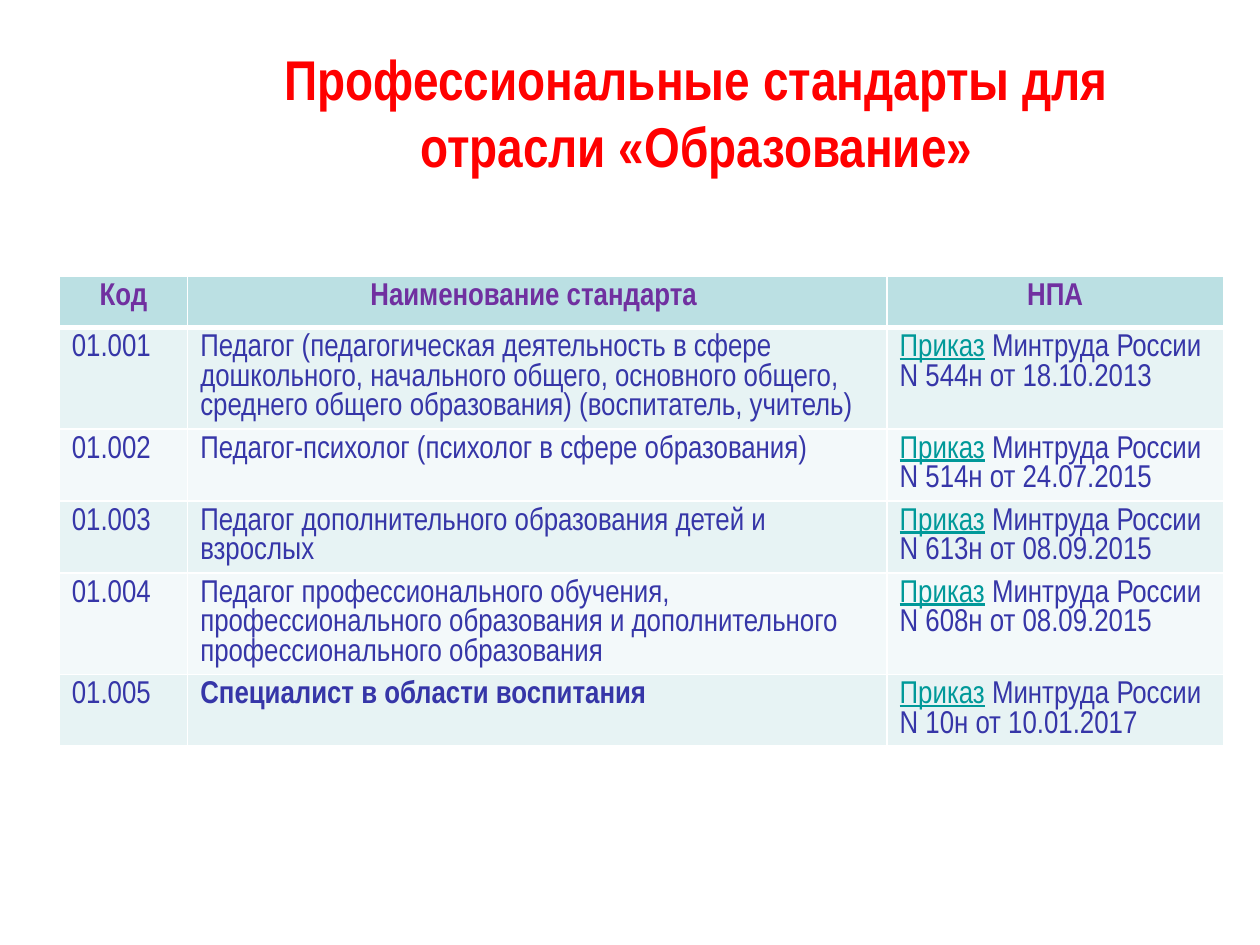
from pptx import Presentation
from pptx.dml.color import RGBColor
from pptx.enum.text import MSO_ANCHOR as Anchor, MSO_AUTO_SIZE as AutoSize, PP_ALIGN as Align
from pptx.oxml.ns import qn
from pptx.util import Inches, Pt
from lxml.etree import SubElement

FONT = "Arial Narrow"
RED, PURPLE, INDIGO, TEAL, WHITE = "FF0000", "7030A0", "3636A8", "009999", "FFFFFF"
HEADER_FILL = "BBE0E3"
BAND_FILLS = ("E7F3F4", "F3F9FA")
COLUMN_WIDTHS = (1.02, 5.55, 2.67)
ROW_HEIGHT = 0.41

HEADERS = ("Код", "Наименование стандарта ", "НПА")
STANDARDS = (
    ("01.001", "Педагог (педагогическая деятельность в сфере дошкольного, начального общего, "
     "основного общего, среднего общего образования) (воспитатель, учитель)",
     "N 544н от 18.10.2013"),
    ("01.002", "Педагог-психолог (психолог в сфере образования)", "N 514н от 24.07.2015"),
    ("01.003", "Педагог дополнительного образования детей и взрослых", "N 613н от 08.09.2015"),
    ("01.004", "Педагог профессионального обучения, профессионального образования "
     "и дополнительного профессионального образования", "N 608н от 08.09.2015"),
    ("01.005", "Специалист в области воспитания", "N 10н от 10.01.2017"),
)
BOLD_CODE = "01.005"


def rgb(value):
    return RGBColor.from_string(value)


def style_span(span, size, color, bold=False, underline=False):
    font = span.font
    font.name, font.size = FONT, Pt(size)
    font.bold, font.underline = bold, underline
    font.color.rgb = rgb(color)


def add_title(page, text):
    title = page.shapes.title
    title.left, title.top = Inches(1.56), Inches(0.3)
    title.width, title.height = Inches(7.94), Inches(1.25)
    frame = title.text_frame
    frame.text = text
    frame.word_wrap = True
    frame.auto_size = AutoSize.NONE
    frame.vertical_anchor = Anchor.TOP
    para = frame.paragraphs[0]
    para.alignment = Align.CENTER
    style_span(para.runs[0], 32, RED, bold=True)


def set_borders(cell, bottom_width):
    properties = cell._tc.get_or_add_tcPr()
    for side, width in (("L", 1), ("R", 1), ("T", 1), ("B", bottom_width)):
        line = SubElement(properties, qn(f"a:ln{side}"), w=str(Pt(width)))
        fill = SubElement(line, qn("a:solidFill"))
        SubElement(fill, qn("a:srgbClr"), val=WHITE)


def fill_cell(cell, spans, fill, align=Align.LEFT, bottom_width=1):
    """Each span is a tuple of text, colour, bold and underline."""
    set_borders(cell, bottom_width)
    cell.fill.solid()
    cell.fill.fore_color.rgb = rgb(fill)
    para = cell.text_frame.paragraphs[0]
    para.alignment = align
    for text, color, bold, underline in spans:
        span = para.add_run()
        span.text = text
        style_span(span, 18, color, bold, underline)


def add_standards_table(page):
    row_count = len(STANDARDS) + 1
    table = page.shapes.add_table(
        row_count, len(HEADERS), Inches(0.47), Inches(2.19),
        Inches(sum(COLUMN_WIDTHS)), Inches(ROW_HEIGHT * row_count)).table
    for column, width in zip(table.columns, COLUMN_WIDTHS):
        column.width = Inches(width)
    for row in table.rows:
        row.height = Inches(ROW_HEIGHT)

    # Header row
    for column, header in enumerate(HEADERS):
        fill_cell(table.cell(0, column), [(header, PURPLE, True, False)],
                  HEADER_FILL, Align.CENTER, bottom_width=3)

    # One banded row per standard
    for row, (code, name, order) in enumerate(STANDARDS, start=1):
        contents = (
            [(code, INDIGO, False, False)],
            [(name, INDIGO, code == BOLD_CODE, False)],
            [("Приказ", TEAL, False, True),
             (f" Минтруда России {order}", INDIGO, False, False)],
        )
        for column, spans in enumerate(contents):
            fill_cell(table.cell(row, column), spans, BAND_FILLS[(row - 1) % 2])


def main():
    deck = Presentation()
    deck.slide_width, deck.slide_height = Inches(10), Inches(7.5)
    page = deck.slides.add_slide(deck.slide_layouts[5])
    add_title(page, "Профессиональные стандарты для отрасли «Образование»")
    add_standards_table(page)
    deck.save("out.pptx")


if __name__ == "__main__":
    main()
